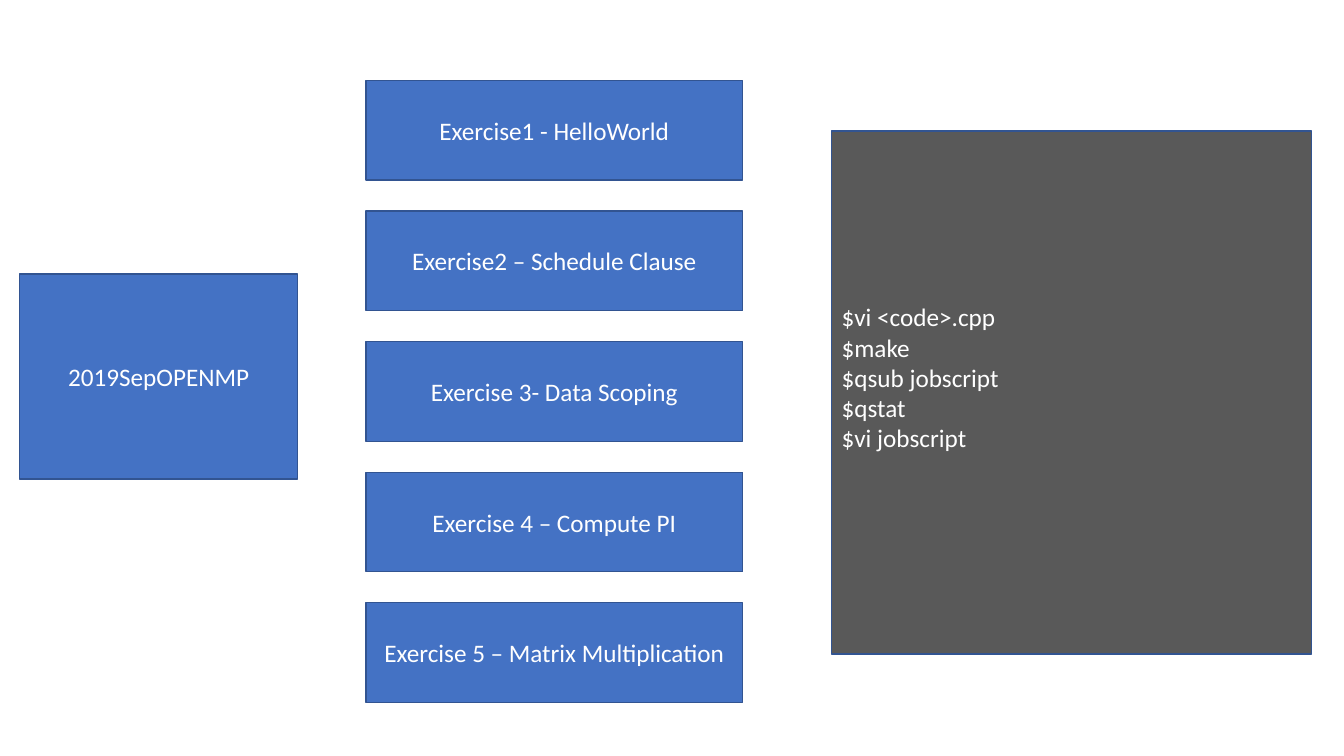
import pptx
import pptx.dml.color
import pptx.enum.shapes
import pptx.enum.text
import pptx.util

Cm = pptx.util.Cm
Pt = pptx.util.Pt
RGBColor = pptx.dml.color.RGBColor
PP_ALIGN = pptx.enum.text.PP_ALIGN

BLUE = RGBColor(0x44, 0x72, 0xC4)
DARK_BLUE = RGBColor(0x32, 0x54, 0x91)
GREY = RGBColor(0x59, 0x59, 0x59)
WHITE = RGBColor(0xFF, 0xFF, 0xFF)

EXERCISES = [
    "Exercise1 - HelloWorld",
    "Exercise2 – Schedule Clause",
    "Exercise 3- Data Scoping",
    "Exercise 4 – Compute PI",
    "Exercise 5 – Matrix Multiplication",
]
EXERCISE_TOP = 2.03
EXERCISE_PITCH = 3.29

COMMANDS = [
    "$vi <code>.cpp",
    "$make",
    "$qsub jobscript",
    "$qstat",
    "$vi jobscript",
]


def add_box(s, left, top, width, height, lines, fill=BLUE, align=PP_ALIGN.CENTER):
    sp = s.shapes.add_shape(
        pptx.enum.shapes.MSO_SHAPE.RECTANGLE,
        Cm(left), Cm(top), Cm(width), Cm(height),
    )
    sp.shadow.inherit = False
    sp.fill.solid()
    sp.fill.fore_color.rgb = fill
    sp.line.color.rgb = DARK_BLUE
    sp.line.width = Pt(1)
    tf = sp.text_frame
    tf.word_wrap = True
    tf.vertical_anchor = pptx.enum.text.MSO_ANCHOR.MIDDLE
    tf.text = "\n".join(lines)
    for p in tf.paragraphs:
        p.alignment = align
        p.font.name = "Calibri"
        p.font.size = Pt(18)
        p.font.color.rgb = WHITE
    return sp


def add_exercises(s):
    for i, title in enumerate(EXERCISES):
        add_box(s, 9.22, EXERCISE_TOP + i * EXERCISE_PITCH, 9.5, 2.51, [title])


def add_terminal(s):
    sp = add_box(s, 20.96, 3.3, 12.09, 13.18, COMMANDS, GREY, PP_ALIGN.LEFT)
    sp.text_frame.margin_bottom = Cm(0.89)


def main():
    prs = pptx.Presentation()
    prs.slide_width = Cm(33.87)
    prs.slide_height = Cm(19.05)
    s = prs.slides.add_slide(prs.slide_layouts[6])
    add_exercises(s)
    add_box(s, 0.5, 6.91, 7, 5.16, ["2019SepOPENMP"])
    add_terminal(s)
    prs.save("out.pptx")


if __name__ == "__main__":
    main()
